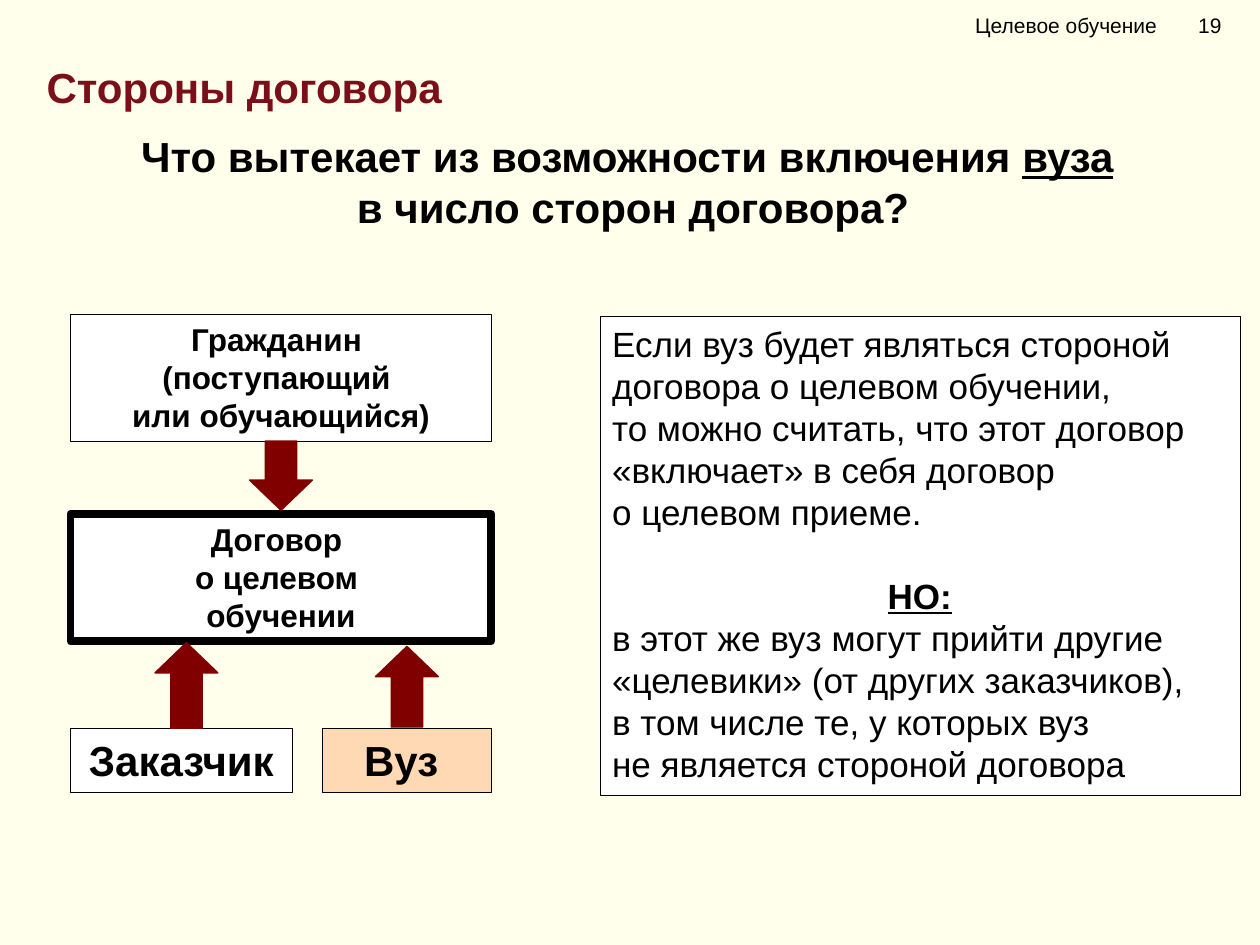
"""Builds the slide on the parties to a targeted training contract."""
from pptx import Presentation
from pptx import util as u
from pptx.dml.color import RGBColor
from pptx.enum import shapes, text
from lxml import etree

THEME = {
    "font": "Arial", "paper": "FFFFEB", "ink": "000000", "heading": "7B0F19",
    "white": "FFFFFF", "accent": "FFD9B3", "arrow": "800000",
    "small": 12, "box": 18, "body": 20, "large": 24,
}
CENTER, LEFT = text.PP_ALIGN.CENTER, text.PP_ALIGN.LEFT
HEADING = "Стороны договора"
RUNNING_HEAD = "Целевое обучение\t19"
QUESTION = [
    [("Что вытекает из возможности включения ", ""), ("вуза", "u"), (" ", "")],
    [("в число сторон договора?", "")],
]
CONCLUSION = [
    "Если вуз будет являться стороной договора о целевом обучении,",
    "то можно считать, что этот договор «включает» в себя договор",
    "о целевом приеме.",
]
OBJECTION = "НО:"
CONSEQUENCE = [
    "в этот же вуз могут прийти другие «целевики» (от других заказчиков),",
    "в том числе те, у которых вуз",
    "не является стороной договора",
]
COLUMN_LEFT, COLUMN_WIDTH = 0.56, 3.34
TALL, SHORT, PARTY_TOP = 1.01, 0.51, 5.78
UNIVERSITY_WIDTH = 1.34
PARTIES = [
    (["Договор ", "о целевом ", "обучении"],
     (COLUMN_LEFT, 4.08, COLUMN_WIDTH, TALL), "white", 4.5, "box"),
    (["Вуз "],
     (COLUMN_LEFT + COLUMN_WIDTH - UNIVERSITY_WIDTH, PARTY_TOP, UNIVERSITY_WIDTH, SHORT),
     "accent", 0.25, "large"),
    (["Заказчик"], (COLUMN_LEFT, PARTY_TOP, 1.76, SHORT), "white", 0.25, "large"),
    (["Гражданин ", "(поступающий ", "или обучающийся)"],
     (COLUMN_LEFT, 2.49, COLUMN_WIDTH, TALL), "white", 0.25, "box"),
]
ARROW_WIDTH = 0.5
ARROWS = [(2.23, 3.5, 4.05), (1.48, 5.78, 5.1), (3.23, 5.77, 5.13)]


def color(key):
    return RGBColor.from_string(THEME[key])


def inches(place):
    return [u.Inches(length) for length in place]


def paint(shape, fill, line, weight):
    shape.shadow.inherit = False
    shape.fill.solid()
    shape.fill.fore_color.rgb = color(fill)
    shape.line.color.rgb = color(line)
    shape.line.width = u.Pt(weight)


def write(shape, lines, size, align=LEFT, bold=False, ink="ink",
          anchor=text.MSO_ANCHOR.TOP, grow=True):
    """Each line is a list of (wording, style) runs; style holds b and u flags."""
    frame = shape.text_frame
    frame.word_wrap = True
    frame.vertical_anchor = anchor
    fit = text.MSO_AUTO_SIZE
    frame.auto_size = fit.SHAPE_TO_FIT_TEXT if grow else fit.NONE
    for index, runs in enumerate(lines):
        paragraph = frame.add_paragraph() if index else frame.paragraphs[0]
        paragraph.alignment = align
        for wording, style in runs:
            run = paragraph.add_run()
            run.text = wording
            run.font.name = THEME["font"]
            run.font.size = u.Pt(THEME[size])
            run.font.color.rgb = color(ink)
            run.font.bold = bold or "b" in style
            run.font.underline = "u" in style
    return frame


def plain(lines):
    return [[(line, "")] for line in lines]


def add_arrow(slide, center, start, tip):
    length = abs(tip - start)
    place = (center - length / 2, (start + tip - ARROW_WIDTH) / 2, length, ARROW_WIDTH)
    arrow = slide.shapes.add_shape(shapes.MSO_SHAPE.RIGHT_ARROW, *inches(place))
    arrow.rotation = 90 if tip > start else 270
    arrow.adjustments[1] = 0.48
    paint(arrow, "arrow", "arrow", 0.75)


def add_box(slide, place, fill, weight):
    box = slide.shapes.add_shape(shapes.MSO_SHAPE.RECTANGLE, *inches(place))
    paint(box, fill, "ink", weight)
    return box


def add_running_head(slide):
    head = slide.shapes.add_textbox(*inches((7.44, 0, 2.56, 0.4)))
    frame = write(head, plain([RUNNING_HEAD]), "small",
                  anchor=text.MSO_ANCHOR.MIDDLE, grow=False)
    frame.margin_left = u.Inches(0.3)
    properties = frame.paragraphs[0]._p.get_or_add_pPr()
    namespace = "{http://schemas.openxmlformats.org/drawingml/2006/main}"
    stops = etree.SubElement(properties, namespace + "tabLst")
    etree.SubElement(stops, namespace + "tab", pos=str(u.Inches(1.77)), algn="l")


def add_panel(slide):
    panel = add_box(slide, (4.76, 2.51, 5.08, 3.8), "white", 0.25)
    lines = plain(CONCLUSION) + [[(OBJECTION, "bu")]] + plain(CONSEQUENCE)
    frame = write(panel, lines, "body")
    objection = frame.paragraphs[len(CONCLUSION)]
    objection.alignment = CENTER
    objection.space_before = u.Pt(24)


def main():
    deck = Presentation()
    deck.slide_width, deck.slide_height = u.Inches(10), u.Inches(7.5)
    slide = deck.slides.add_slide(deck.slide_layouts[5])
    slide.background.fill.solid()
    slide.background.fill.fore_color.rgb = color("paper")

    heading = slide.shapes.title
    heading.left, heading.top, heading.width, heading.height = inches((0.27, 0.44, 9.29, 0.47))
    write(heading, plain([HEADING]), "large", bold=True, ink="heading", grow=False)

    for lines, place, fill, weight, size in PARTIES:
        write(add_box(slide, place, fill, weight), plain(lines), size, CENTER, bold=True)
    for arrow in ARROWS:
        add_arrow(slide, *arrow)
    add_running_head(slide)
    add_panel(slide)
    question = slide.shapes.add_textbox(*inches((0.2, 0.99, 9.65, 0.91)))
    write(question, QUESTION, "large", CENTER, bold=True)
    deck.save("out.pptx")


if __name__ == "__main__":
    main()
